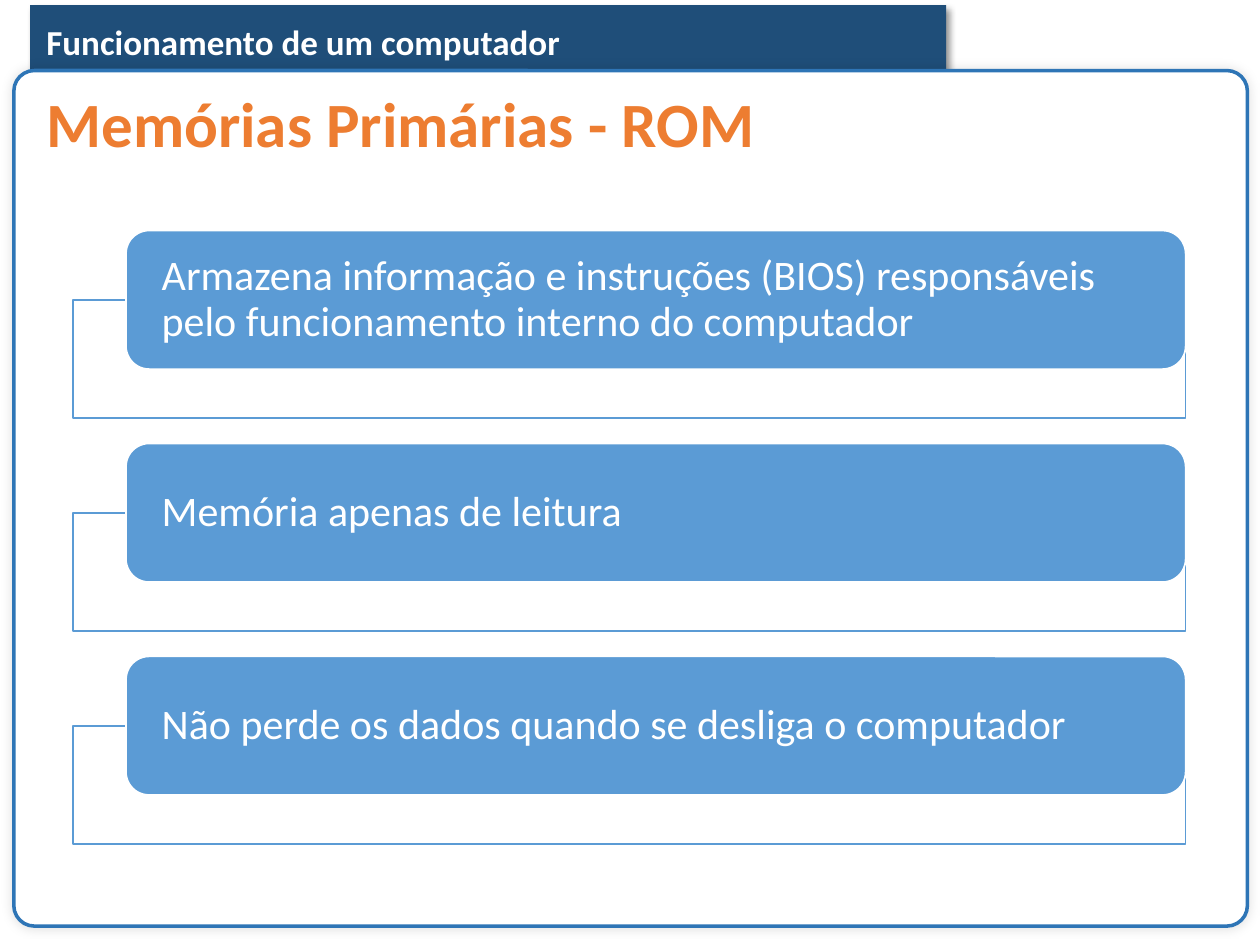
from lxml import etree
from pptx import Presentation
from pptx.dml.color import RGBColor
from pptx.enum.shapes import MSO_SHAPE
from pptx.enum.text import MSO_ANCHOR, PP_ALIGN
from pptx.oxml.ns import qn
from pptx.util import Inches, Pt

RECTANGLE = MSO_SHAPE.RECTANGLE
ROUNDED = MSO_SHAPE.ROUNDED_RECTANGLE
TOP = MSO_ANCHOR.TOP
MIDDLE = MSO_ANCHOR.MIDDLE
LEFT = PP_ALIGN.LEFT

FONT = "Calibri"
WHITE = "FFFFFF"
NAVY = "1F4E79"
BORDER = "2E75B6"
BLUE = "5B9BD5"
ORANGE = "ED7D31"

STATEMENTS = [
    "Armazena informação e instruções (BIOS) responsáveis pelo funcionamento interno do computador",
    "Memória apenas de leitura",
    "Não perde os dados quando se desliga o computador",
]
FIRST_TOP = 1.83
ROW_STEP = 1.69
FRAME_OFFSET = 0.55


def color(hex_value):
    return RGBColor.from_string(hex_value)


class SlideBuilder:
    def __init__(self, slide, font):
        self.slide = slide
        self.font = font

    def box(self, kind, left, top, width, height, fill, line=None, line_width=1):
        shape = self.slide.shapes.add_shape(
            kind, Inches(left), Inches(top), Inches(width), Inches(height))
        shape.shadow.inherit = False
        shape.fill.solid()
        shape.fill.fore_color.rgb = color(fill)
        if line:
            shape.line.color.rgb = color(line)
            shape.line.width = Pt(line_width)
        else:
            shape.line.fill.background()
        return shape

    def text_box(self, left, top, width, height):
        return self.slide.shapes.add_textbox(
            Inches(left), Inches(top), Inches(width), Inches(height))

    def add_text(self, shape, text, size, text_color, bold=False, spacing=0.9,
                 anchor=TOP, side_inset=0.1, end_inset=0.05):
        frame = shape.text_frame
        frame.word_wrap = True
        frame.vertical_anchor = anchor
        frame.margin_left = frame.margin_right = Inches(side_inset)
        frame.margin_top = frame.margin_bottom = Inches(end_inset)
        paragraph = frame.paragraphs[0]
        paragraph.alignment = LEFT
        paragraph.line_spacing = spacing
        run = paragraph.add_run()
        run.text = text
        run.font.name = self.font
        run.font.size = Pt(size)
        run.font.bold = bold
        run.font.color.rgb = color(text_color)

    def shadow(self, shape, opacity, blur, distance=0, angle=0):
        """Add a black outer shadow; opacity in percent, lengths in points."""
        effects = shape._element.spPr.find(qn("a:effectLst"))
        outer = etree.SubElement(
            effects, qn("a:outerShdw"), blurRad=str(Pt(blur)), dist=str(Pt(distance)),
            dir=str(angle * 60000), algn="ctr", rotWithShape="0")
        black = etree.SubElement(outer, qn("a:srgbClr"), val="000000")
        etree.SubElement(black, qn("a:alpha"), val=str(opacity * 1000))

    def fill_opacity(self, shape, percent):
        fill_color = shape._element.spPr.find(qn("a:solidFill"))[0]
        etree.SubElement(fill_color, qn("a:alpha"), val=str(percent * 1000))

    def statement(self, top, text):
        """Draw an outlined frame with a filled, rounded label above it."""
        frame = self.box(RECTANGLE, 0.58, top + FRAME_OFFSET, 8.83, 0.94, WHITE, BLUE)
        self.fill_opacity(frame, 90)
        label = self.box(ROUNDED, 1, top, 8.41, 1.1, BLUE, WHITE)
        self.add_text(label, text, 24, WHITE, anchor=MIDDLE, side_inset=0.23, end_inset=0)


def main():
    presentation = Presentation()
    presentation.slide_width = Inches(10)
    presentation.slide_height = Inches(7.5)
    slide = presentation.slides.add_slide(presentation.slide_layouts[6])
    builder = SlideBuilder(slide, FONT)

    banner = builder.box(RECTANGLE, 0.24, 0.04, 7.27, 0.62, NAVY)
    builder.shadow(banner, 40, 4, 3, 45)
    builder.add_text(builder.text_box(0.27, 0.06, 7.5, 0.47),
                     "Funcionamento de um computador", 20, WHITE, bold=True, spacing=Pt(28.1))

    panel = builder.box(ROUNDED, 0.11, 0.56, 9.79, 6.79, WHITE, BORDER, 2)
    panel.adjustments[0] = 0.024
    builder.shadow(panel, 13, 6)

    for row, text in enumerate(STATEMENTS):
        builder.statement(FIRST_TOP + row * ROW_STEP, text)

    builder.add_text(builder.text_box(0.27, 0.69, 9.2, 0.66),
                     "Memórias Primárias - ROM", 36, ORANGE, bold=True)

    presentation.save("out.pptx")


if __name__ == "__main__":
    main()
